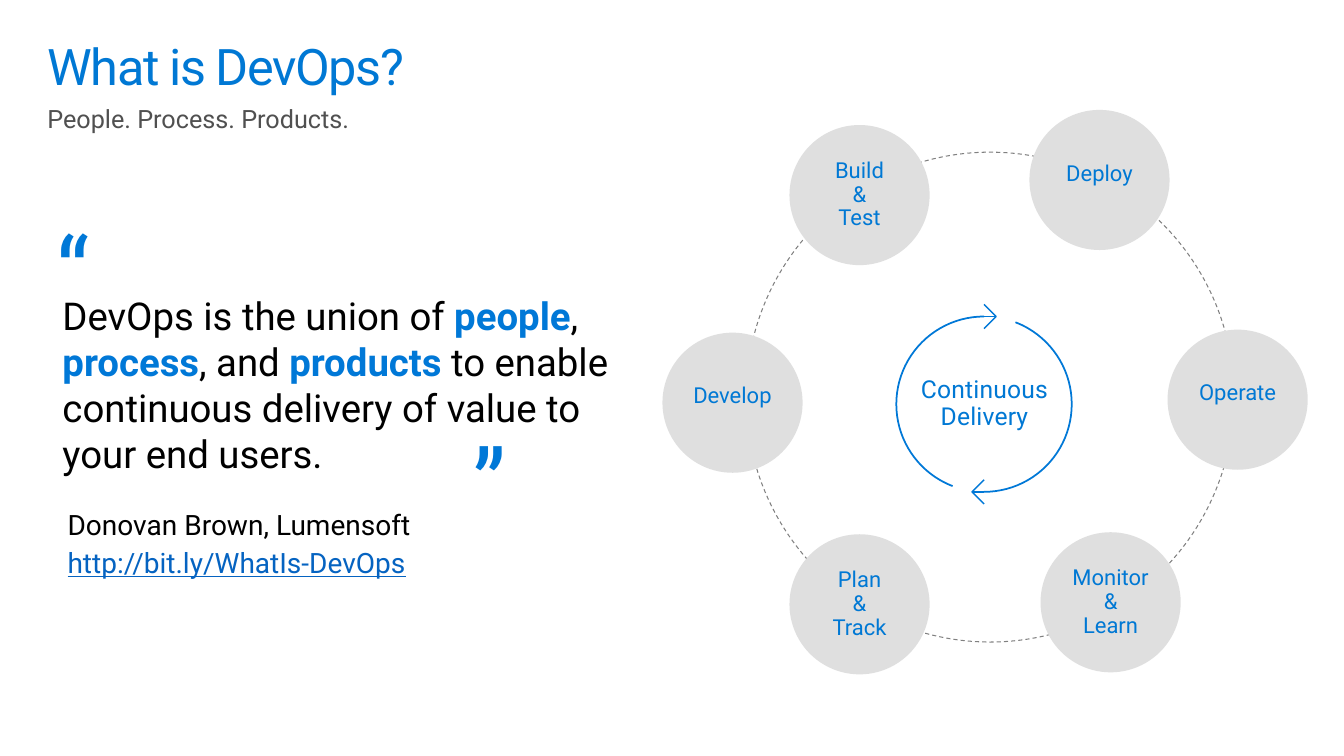
from pptx import Presentation
from pptx import util as u
from pptx.dml.color import RGBColor
from pptx.enum import dml, shapes, text
from pptx.oxml.ns import qn

BLUE, AZURE, BLACK = "0078D4", "0078D7", "000000"
DISC, HUB = 139, 87
QUOTE = [("DevOps is the union of ", 0), ("people", 1), (", ", 0), ("process", 1),
         (", and ", 0), ("products", 1),
         (" to enable continuous delivery of value to your end users.", 0)]
NODES = [("Build\v&\vTest", 126, 15), ("Deploy", 364, 0), ("Operate", 501, 218),
         ("Monitor\v&\vLearn", 375, 419), ("Plan\v&\vTrack", 126, 421),
         ("Develop", 0, 221)]


def px(n):
    """Turn px into EMU, at 100 px to the inch."""
    return u.Emu(round(n * 9144))


def rgb(code):
    """Turn a hex string into a colour."""
    return RGBColor.from_string(code)


def style(para, size, color, font="Roboto", gap=0, lead=None, align=None):
    """Set the font and spacing of a paragraph, with gap as tracking in points."""
    para.font.size, para.font.name = u.Pt(size), font
    para.font.color.rgb = rgb(color)
    para.line_spacing, para.alignment = lead, align
    if gap:
        for run in para.runs:
            run._r.get_or_add_rPr().set("spc", str(round(gap * 100)))


def frame(tf, pads, wrap=True, anchor=text.MSO_ANCHOR.TOP):
    """Set the insets, wrapping and anchor of a text frame."""
    tf.margin_left, tf.margin_top, tf.margin_right, tf.margin_bottom = map(px, pads)
    tf.word_wrap, tf.vertical_anchor = wrap, anchor


def label(slide, box, words, pads=(0, 0, 0, 0), wrap=True,
          anchor=text.MSO_ANCHOR.TOP, **look):
    """Add a text box with one paragraph and return its frame."""
    tf = slide.shapes.add_textbox(*map(px, box)).text_frame
    frame(tf, pads, wrap, anchor)
    para = tf.paragraphs[0]
    para.text = words
    style(para, **look)
    return tf


def shape(slide, kind, box, fill=None):
    """Add a preset shape with no line and an optional fill."""
    item = slide.shapes.add_shape(kind, *map(px, box))
    plain(item, fill)
    item.line.fill.background()
    return item


def plain(item, fill=None):
    """Take the shadow off a shape and set its fill."""
    item.shadow.inherit = False
    if fill:
        item.fill.solid()
        item.fill.fore_color.rgb = rgb(fill)
    else:
        item.fill.background()


def stroke(item, color, width):
    """Set the line of a shape or connector."""
    item.line.color.rgb = rgb(color)
    item.line.width = u.Pt(width)


def header(slide, x, y, w):
    """Place the title and the subtitle."""
    label(slide, (x, y, w, 81), "What is DevOps?", (0, 18, 0, 0),
          size=36, color=BLUE, gap=-1, lead=0.9)
    label(slide, (x, y + 79, w, 30), "People. Process. Products.",
          size=18, color="505050")


def quote(slide, x, y, w, h):
    """Place the quotation, its marks and its source."""
    tf = label(slide, (x, y, w, h), "", (15, 83, 20, 16), size=27.4, color=BLACK)
    for words, key in QUOTE:
        run = tf.paragraphs[0].add_run()
        run.text = words
        if key:
            run.font.bold = True
            run.font.color.rgb = rgb(AZURE)
    for mark, dx, dy in (("“", 0, 0), ("”", 413, 210)):
        label(slide, (x + dx, y + dy, 85, 118), mark, (10, 5, 10, 5), False,
              size=62.7, color=AZURE, font="Roboto Slab", gap=-0.1)
    tf = label(slide, (x, y + 284, 383, 101), "Donovan Brown, Lumensoft",
               (20, 16, 20, 16), False, size=20, color=BLACK, lead=0.9)
    link = tf.add_paragraph()
    link.text = "http://bit.ly/WhatIs-DevOps"
    style(link, 20, "0563C1", lead=0.9)
    link.font.underline = True
    for para in tf.paragraphs:
        para.space_after = u.Pt(5.9)


def node(slide, x, y, words):
    """Place one stage disc with its label."""
    disc = shape(slide, shapes.MSO_SHAPE.OVAL, (x, y, DISC, DISC), "DFDFDF")
    lift = 0 if "\v" in words else 12
    frame(disc.text_frame, (0, 0, 0, lift), False, text.MSO_ANCHOR.MIDDLE)
    para = disc.text_frame.paragraphs[0]
    para.text = words
    style(para, 15.7, BLUE, lead=0.9, align=text.PP_ALIGN.CENTER)


def arrow(slide, x, y, way):
    """Place an open arrow with a short shaft, pointing right (1) or left (-1)."""
    tip = x + 12 * way
    path = slide.shapes.build_freeform(px(x), px(y - 12))
    path.add_line_segments([(px(tip), px(y)), (px(x), px(y + 12))], close=False)
    head = path.convert_to_shape()
    plain(head)
    shaft = slide.shapes.add_connector(shapes.MSO_CONNECTOR.STRAIGHT,
                                       px(x), px(y), px(tip), px(y))
    props = shaft._element.spPr
    for item in (head, shaft):
        stroke(item, AZURE, 1)
    props.append(props.makeelement(qn("a:effectLst"), {}))


def hub(slide, x, y):
    """Place the turning arrows and their caption around a centre."""
    label(slide, (x - 90, y - 61, 181, 122), "Continuous\vDelivery",
          anchor=text.MSO_ANCHOR.MIDDLE, size=17.6, color=BLUE, gap=0.1,
          lead=0.9, align=text.PP_ALIGN.CENTER)
    for start, end, way in ((291, 90, -1), (111, 270, 1)):
        arc = shape(slide, shapes.MSO_SHAPE.ARC, (x - HUB, y - HUB, 2 * HUB, 2 * HUB))
        arc.adjustments[0], arc.adjustments[1] = start * 0.6, end * 0.6
        stroke(arc, AZURE, 1.25)
        arrow(slide, x, y - HUB * way, way)


def wheel(slide, x, y):
    """Place the dashed ring, the stages on it and the hub."""
    ring = shape(slide, shapes.MSO_SHAPE.OVAL, (x + 83, y + 42, 484, 486))
    stroke(ring, "808080", 0.75)
    ring.line.dash_style = dml.MSO_LINE.DASH
    for words, dx, dy in NODES:
        node(slide, x + dx, y + dy, words)
    hub(slide, x + 319, y + 292)


def main():
    """Build the slide and save it."""
    deck = Presentation()
    deck.slide_width, deck.slide_height = px(1333), px(750)
    slide = deck.slides.add_slide(deck.slide_layouts[6])
    header(slide, 47, 24, 1240)
    quote(slide, 47, 207, 580, 425)
    wheel(slide, 657, 109)
    deck.save("out.pptx")


if __name__ == "__main__":
    main()
